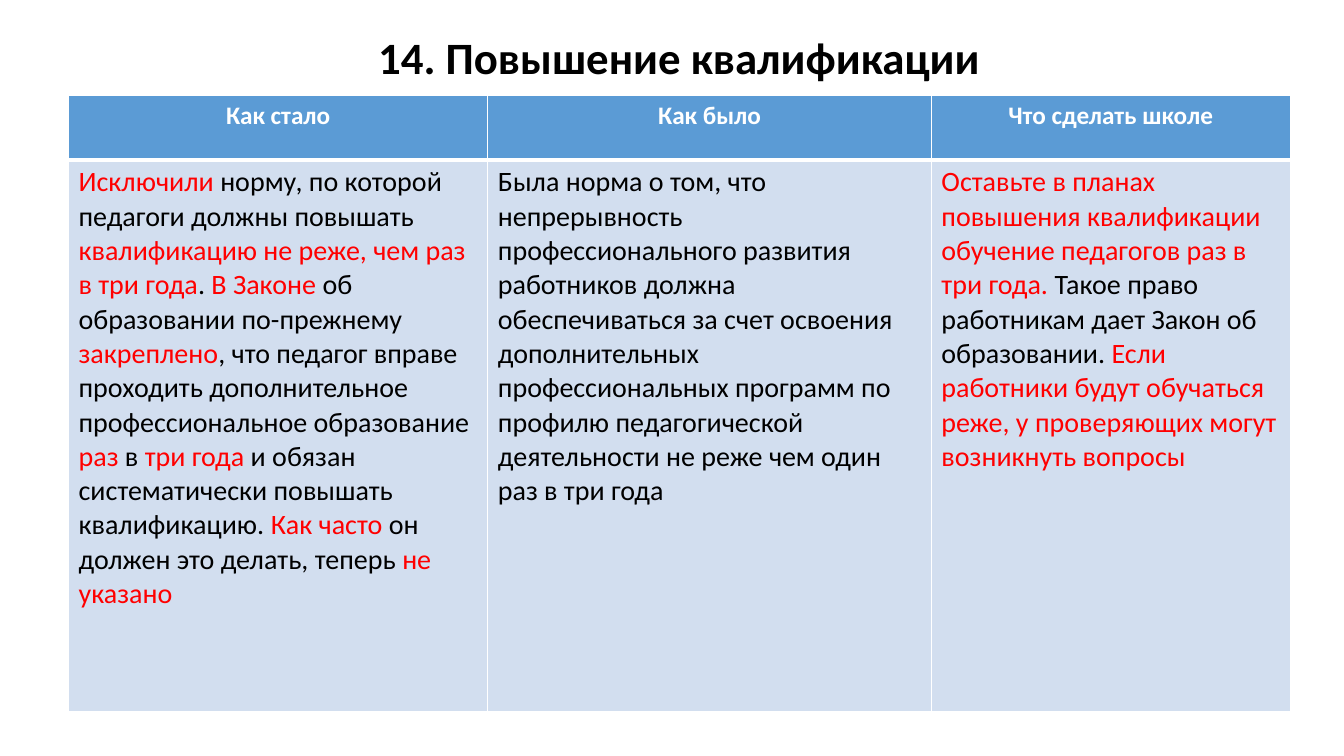
from lxml import etree
from pptx import Presentation
from pptx import util as u
from pptx.dml import color
from pptx.enum import text
from pptx.oxml import ns

COLORS = {
    "black": "000000",
    "white": "FFFFFF",
    "red": "FF0000",
    "header": "5B9BD5",
    "body": "D2DEEF",
}
HEADERS = ["Как стало", "Как было", "Что сделать школе"]
BODIES = [
    "|Исключили |норму, по которой педагоги должны повышать "
    "|квалификацию не реже, чем раз в три года|. |В Законе "
    "|об образовании по-прежнему |закреплено|, что педагог вправе "
    "проходить дополнительное профессиональное образование |раз| в "
    "|три года| и обязан систематически повышать квалификацию. "
    "|Как часто| он должен это делать, теперь |не указано|",
    "Была норма о том, что непрерывность профессионального развития "
    "работников должна обеспечиваться за счет освоения дополнительных "
    "профессиональных программ по профилю педагогической деятельности "
    "не реже чем один раз в три года",
    "|Оставьте в планах повышения квалификации обучение педагогов раз "
    "в три года. |Такое право работникам дает Закон об образовании. "
    "|Если работники будут обучаться реже, у проверяющих могут "
    "возникнуть вопросы|",
]


class SlideBuilder:
    font = "Calibri"
    columns, rows = 160, 90

    def __init__(self, presentation):
        self.width = presentation.slide_width
        self.height = presentation.slide_height
        self.slide = presentation.slides.add_slide(presentation.slide_layouts[6])

    def x(self, columns):
        return round(self.width * columns / self.columns)

    def y(self, rows):
        return round(self.height * rows / self.rows)

    def box(self, left, top, width, height):
        return self.x(left), self.y(top), self.x(width), self.y(height)

    def fill_paragraph(self, paragraph, content, size, tone, bold=False, centered=False):
        paragraph.alignment = text.PP_ALIGN.CENTER if centered else text.PP_ALIGN.LEFT
        paragraph.font.name = self.font
        paragraph.font.size = u.Pt(size)
        paragraph.font.bold = bold
        for index, part in enumerate(content.split("|")):
            if part:
                run = paragraph.add_run()
                run.text = part
                run_tone = "red" if index % 2 else tone
                run.font.color.rgb = color.RGBColor.from_string(COLORS[run_tone])

    def title(self, content, *area):
        shape = self.slide.shapes.add_textbox(*self.box(*area))
        frame = shape.text_frame
        frame.word_wrap = True
        frame.vertical_anchor = text.MSO_ANCHOR.MIDDLE
        paragraph = frame.paragraphs[0]
        paragraph.line_spacing = 0.9
        self.fill_paragraph(paragraph, content, 32, "black", bold=True, centered=True)

    def borders(self, cell, **widths):
        properties = cell._tc.get_or_add_tcPr()
        for index, (side, width) in enumerate(widths.items()):
            line = etree.Element(ns.qn(f"a:ln{side}"), w=str(u.Pt(width)))
            fill = etree.SubElement(line, ns.qn("a:solidFill"))
            etree.SubElement(fill, ns.qn("a:srgbClr"), val=COLORS["white"])
            properties.insert(index, line)

    def cell(self, cell, fill):
        cell.fill.solid()
        cell.fill.fore_color.rgb = color.RGBColor.from_string(COLORS[fill])
        return cell.text_frame.paragraphs[0]

    def table(self, left, top, widths, heights):
        area = self.box(left, top, sum(widths), sum(heights))
        table = self.slide.shapes.add_table(len(heights), len(widths), *area).table
        table.horz_banding = False
        for row, height in zip(table.rows, heights):
            row.height = self.y(height)
        for index, width in enumerate(widths):
            table.columns[index].width = self.x(width)
            header, body = table.cell(0, index), table.cell(1, index)
            self.fill_paragraph(self.cell(header, "header"), HEADERS[index], 18, "white",
                                bold=True, centered=True)
            self.borders(header, L=1, R=1, T=1, B=3)
            self.fill_paragraph(self.cell(body, "body"), BODIES[index], 20, "black")
            self.borders(body, L=1, R=1, T=3, B=1)


def main():
    presentation = Presentation()
    presentation.slide_width = u.Inches(13.33)
    presentation.slide_height = u.Inches(7.5)
    builder = SlideBuilder(presentation)
    builder.title("14. Повышение квалификации", 11.88, 0.96, 138, 12.48)
    builder.table(8.16, 11.4, [49.92, 52.8, 42.72], [7.68, 65.64])
    presentation.save("out.pptx")


if __name__ == "__main__":
    main()
